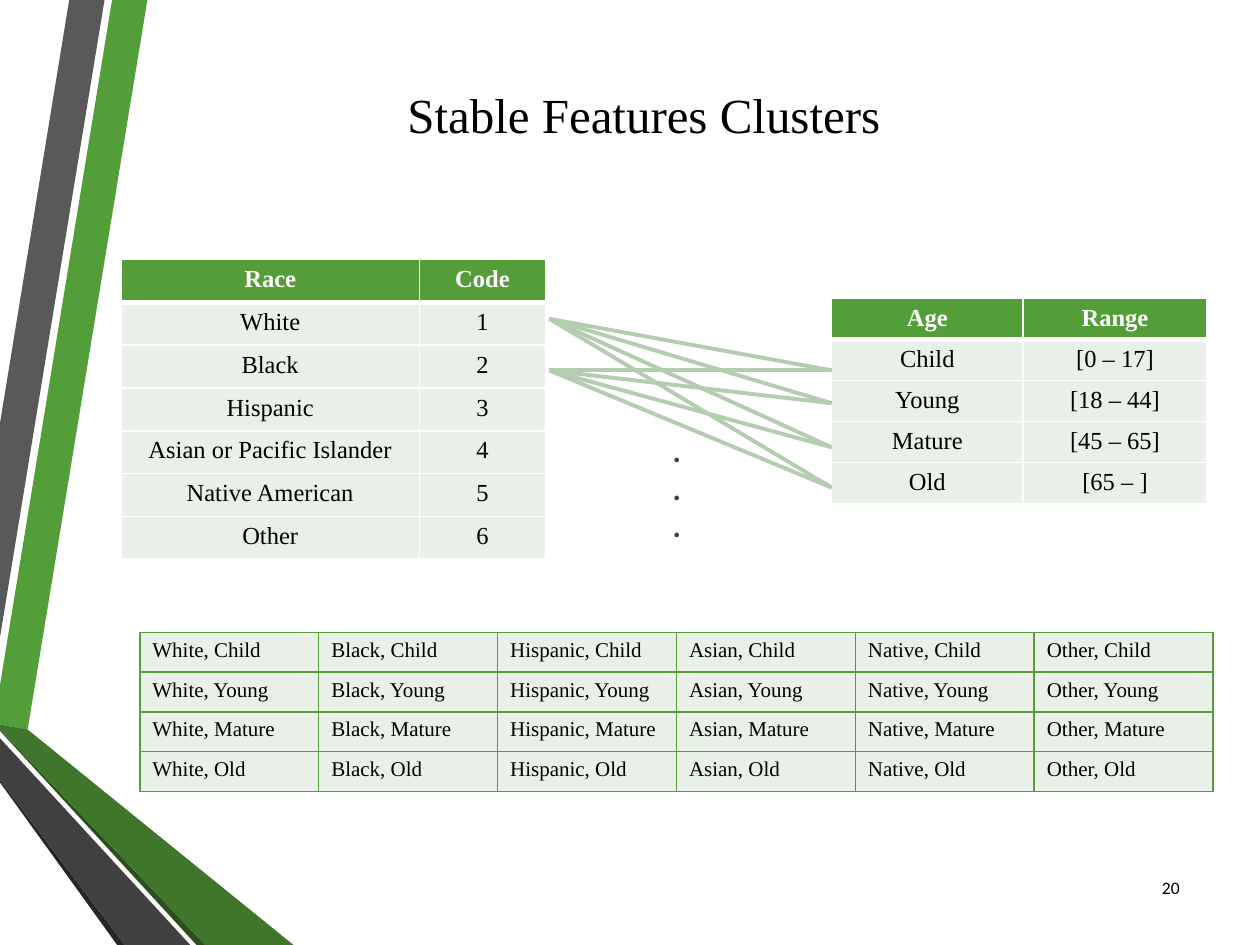
from lxml import etree
from pptx import Presentation
from pptx import util as u
from pptx.dml.color import RGBColor
from pptx.enum import shapes, text
from pptx.oxml import ns

Inches, Pt, rgb = u.Inches, u.Pt, RGBColor.from_string
SERIF, SANS = "Times New Roman", "Calibri"
GREEN, PALE, LINK = "549E39", "E9F0E8", "B4CCAF"
WHITE, BLACK = "FFFFFF", "000000"
LEFT, CENTER, RIGHT = text.PP_ALIGN.LEFT, text.PP_ALIGN.CENTER, text.PP_ALIGN.RIGHT


def write(tf, lines, size, font, color, align=LEFT, bold=False):
    for i, line in enumerate(lines):
        p = tf.add_paragraph() if i else tf.paragraphs[0]
        p.alignment = align
        r = p.add_run()
        r.text = line
        r.font.size, r.font.name, r.font.bold = Pt(size), font, bold
        r.font.color.rgb = rgb(color)


def add_grid(left, top, widths, row_height, rows, size, align, border, header):
    tbl = s.shapes.add_table(len(rows), len(widths), Inches(left), Inches(top),
                             Inches(sum(widths)), Inches(row_height * len(rows))).table
    tbl.first_row, tbl.horz_banding = header, False
    for col, width in zip(tbl.columns, widths):
        col.width = Inches(width)
    for i, values in enumerate(rows):
        tbl.rows[i].height = Inches(row_height)
        head = header and i == 0
        for j, value in enumerate(values):
            cell = tbl.cell(i, j)
            tcPr = cell._tc.get_or_add_tcPr()
            for side in "LRTB":
                # A thick rule separates the header from the body
                thick = header and (i, side) in ((0, "B"), (1, "T"))
                ln = etree.SubElement(tcPr, ns.qn(f"a:ln{side}"), w=str(Pt(3 if thick else 1)))
                fill = etree.SubElement(ln, ns.qn("a:solidFill"))
                etree.SubElement(fill, ns.qn("a:srgbClr"), val=border)
            cell.fill.solid()
            cell.fill.fore_color.rgb = rgb(GREEN if head else PALE)
            write(cell.text_frame, [value], size, SERIF, WHITE if head else BLACK, align, head)


prs = Presentation()
prs.slide_width, prs.slide_height = Inches(10), Inches(7.5)
s = prs.slides.add_slide(prs.slide_layouts[5])

# Ribbons along the left edge
ribbons = [
    (GREEN, [(0, 5.44), (0, 5.75), (0.22, 5.79), (1.17, 0), (0.89, 0)]),
    ("595959", [(0.83, 0), (0.55, 0), (0, 3.36), (0, 5.06)]),
    ("262626", [(0, 6.19), (0, 6.21), (0.93, 7.5), (0.99, 7.5)]),
    ("2A4F1C", [(0, 5.79), (0, 5.8), (1.56, 7.5), (1.63, 7.5)]),
    ("3F762B", [(0, 5.79), (1.63, 7.5), (2.33, 7.5), (0.22, 5.79), (0, 5.75)]),
    ("404040", [(0, 6.19), (0.99, 7.5), (1.51, 7.5), (0, 5.86)]),
]
for color, points in ribbons:
    points = [(Inches(x), Inches(y)) for x, y in points]
    fb = s.shapes.build_freeform(*points[0])
    fb.add_line_segments(points[1:], close=True)
    sp = fb.convert_to_shape()
    sp.shadow.inherit = False
    sp.fill.solid()
    sp.fill.fore_color.rgb = rgb(color)
    sp.line.fill.background()

# Title
title = s.shapes.title
title.left, title.top, title.width, title.height = map(Inches, (-0.64, 0.62, 11.5, 1.45))
title.text_frame.vertical_anchor = text.MSO_ANCHOR.TOP
write(title.text_frame, ["Stable Features Clusters"], 28, SERIF, BLACK, CENTER)

# Feature tables
races = ["White", "Black", "Hispanic", "Asian or Pacific Islander", "Native American", "Other"]
ages = {"Child": "[0 – 17]", "Young": "[18 – 44]", "Mature": "[45 – 65]", "Old": "[65 – ]"}
race_rows = [("Race", "Code")] + [(race, str(n)) for n, race in enumerate(races, 1)]
age_rows = [("Age", "Range")] + list(ages.items())
add_grid(0.96, 2.06, [2.37, 1], 0.34, race_rows, 14, CENTER, WHITE, True)
add_grid(6.6, 2.37, [1.52, 1.46], 0.325, age_rows, 14, CENTER, WHITE, True)

# Every race and age combination
pairs = [[f"{race.split()[0]}, {age}" for race in races] for age in ages]
add_grid(1.11, 5.02, [1.42] * 6, 0.315, pairs, 12, LEFT, GREEN, False)

# Links from the first two races to each age
for race_y in (2.53, 2.94):
    for age_y in (2.94, 3.2, 3.55, 3.87):
        link = s.shapes.add_connector(shapes.MSO_CONNECTOR.STRAIGHT, Inches(4.36),
                                      Inches(race_y), Inches(6.6), Inches(age_y))
        link.line.color.rgb = rgb(LINK)
        link.line.width = Pt(2.25)
        etree.SubElement(link._element.spPr, ns.qn("a:effectLst"))

# Continuation dots and slide number
dots = s.shapes.add_textbox(Inches(5.24), Inches(3.37), Inches(0.49), Inches(1.01))
dots.text_frame.word_wrap = True
write(dots.text_frame, ["."] * 3, 18, SANS, "34473D", bold=True)

number = s.shapes.add_textbox(Inches(9.01), Inches(6.84), Inches(0.45), Inches(0.4))
number.text_frame.word_wrap = True
number.text_frame.vertical_anchor = text.MSO_ANCHOR.MIDDLE
write(number.text_frame, ["20"], 10, SANS, BLACK, RIGHT)

prs.save("out.pptx")
